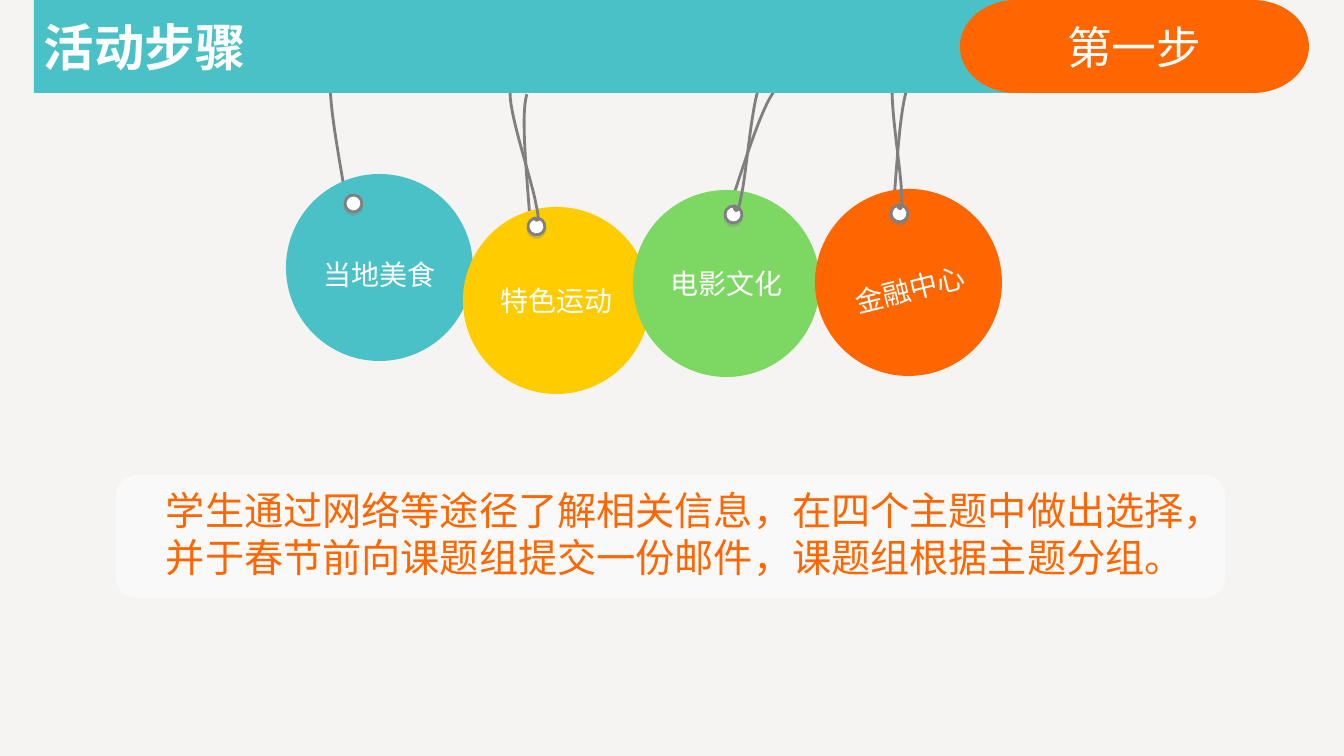
"""Build the activity-steps slide: a header bar, four hanging tags and a note."""
from lxml.etree import SubElement
from pptx import Presentation
from pptx.dml.color import RGBColor
from pptx.enum.shapes import MSO_SHAPE
from pptx.enum.text import MSO_ANCHOR, PP_ALIGN
from pptx.oxml.ns import qn
from pptx.util import Pt

FONT = "Noto Sans CJK SC"
TEAL, YELLOW, GREEN, ORANGE = "4AC1C7", "FFCC00", "7DD763", "FF6600"
WHITE, CORD, RING, PAPER = "FFFFFF", "7F7F7F", "808080", "F5F4F2"
TAG_SIZE, HOLE_SIZE = 187, 17
HOLE_TURN, FRONT_TURN = -68, -6.8

TITLE, STEP = "活动步骤", "第一步"
NOTE = ("学生通过网络等途径了解相关信息，在四个主题中做出选择，"
        "并于春节前向课题组提交一份邮件，课题组根据主题分组。")

BACK_CORD = dict(size=(99, 79), curve=[(99, 79), (56, 48), (12, 18), (0, 0)])
FRONT_CORD = dict(size=(109, 78), curve=[(104, 77), (108, 78), (115, 78), (97, 66),
                                         (79, 52), (11, 16), (0, 0)])
CENTERED = dict(align=PP_ALIGN.CENTER, spacing=1.4)
PLAIN = dict(align=PP_ALIGN.LEFT)
TAGS = [
    dict(text="当地美食", color=TEAL, at=(286, 174), hole=(345, 195), turn=0, layout=CENTERED,
         back=(289, 96), front=None, tilt=44.8),
    dict(text="特色运动", color=YELLOW, at=(463, 207), hole=(528, 218), turn=0, layout=PLAIN,
         back=(479, 118), front=(469, 117), tilt=49.9),
    dict(text="电影文化", color=GREEN, at=(633, 190), hole=(725, 206), turn=0, layout=PLAIN,
         back=(703, 109), front=(694, 107), tilt=72.7),
    dict(text="金融中心", color=ORANGE, at=(815, 189), hole=(891, 205), turn=-14, layout=CENTERED,
         back=(852, 105), front=(842, 104), tilt=58.7),
]


def px(length):
    return round(length * 914400 / 100.8)


def rgb(color):
    return RGBColor.from_string(color)


def write(shape, text, size, color=WHITE, bold=False, align=PP_ALIGN.CENTER,
          anchor=MSO_ANCHOR.MIDDLE, spacing=None):
    frame = shape.text_frame
    frame.word_wrap = True
    frame.vertical_anchor = anchor
    paragraph = frame.paragraphs[0]
    paragraph.alignment = align
    paragraph.line_spacing = spacing
    run = paragraph.add_run()
    run.text = text
    run.font.size = Pt(size)
    run.font.bold = bold
    run.font.name = FONT
    run.font.color.rgb = rgb(color)
    SubElement(run.font._element, qn("a:ea"), typeface=FONT)


def add_block(shapes, kind, left, top, width, height, fill):
    shape = shapes.add_shape(kind, px(left), px(top), px(width), px(height))
    shape.shadow.inherit = False
    shape.fill.solid()
    shape.fill.fore_color.rgb = rgb(fill)
    shape.line.fill.background()
    return shape


def set_alpha(color_element, percent):
    SubElement(color_element, qn("a:alpha"), val=str(percent * 1000))


def add_points(outline, command, points):
    element = SubElement(outline, qn(command))
    for x, y in points:
        SubElement(element, qn("a:pt"), x=str(px(x)), y=str(px(y)))


def add_cord(shapes, left, top, size, curve, rotation):
    width, height = size
    builder = shapes.build_freeform(px(left), px(top))
    builder.add_line_segments([(px(left + width), px(top + height))], close=False)
    cord = builder.convert_to_shape()
    outline = next(cord._element.iter(qn("a:path")))
    for child in list(outline):
        outline.remove(child)
    add_points(outline, "a:moveTo", curve[:1])
    for first in range(1, len(curve), 3):
        add_points(outline, "a:cubicBezTo", curve[first:first + 3])
    cord.rotation = rotation
    cord.shadow.inherit = False
    cord.fill.background()
    cord.line.color.rgb = rgb(CORD)
    cord.line.width = Pt(2)


def add_hole(shapes, left, top, rotation):
    hole = add_block(shapes, MSO_SHAPE.OVAL, left, top, HOLE_SIZE, HOLE_SIZE, WHITE)
    hole.rotation = rotation
    hole.line.color.rgb = rgb(RING)
    hole.line.width = Pt(2)
    effects = hole._element.spPr.find(qn("a:effectLst"))
    shadow = SubElement(effects, qn("a:outerShdw"), blurRad="0", dist=str(Pt(1.8)),
                        dir="5400000", rotWithShape="0")
    set_alpha(SubElement(shadow, qn("a:srgbClr"), val=RING), 35)


def add_tag(shapes, tag):
    tilt = tag["tilt"]
    add_cord(shapes, *tag["back"], **BACK_CORD, rotation=tilt)
    disc = add_block(shapes, MSO_SHAPE.OVAL, *tag["at"], TAG_SIZE, TAG_SIZE, tag["color"])
    disc.rotation = tag["turn"]
    write(disc, tag["text"], 20, **tag["layout"])
    add_hole(shapes, *tag["hole"], rotation=tilt + HOLE_TURN)
    if tag["front"]:
        add_cord(shapes, *tag["front"], **FRONT_CORD, rotation=tilt + FRONT_TURN)


def add_note(shapes):
    group = shapes.add_group_shape()
    panel = add_block(group.shapes, MSO_SHAPE.ROUNDED_RECTANGLE, 116, 475, 1109, 123, WHITE)
    set_alpha(panel._element.spPr.find(qn("a:solidFill"))[0], 54)
    box = group.shapes.add_textbox(px(156), px(481), px(1069), px(105))
    write(box, NOTE, 28, color=ORANGE, align=PP_ALIGN.LEFT, anchor=MSO_ANCHOR.TOP)


def main():
    presentation = Presentation()
    presentation.slide_width, presentation.slide_height = px(1344), px(756)
    slide = presentation.slides.add_slide(presentation.slide_layouts[6])
    slide.background.fill.solid()
    slide.background.fill.fore_color.rgb = rgb(PAPER)
    for tag in TAGS:
        add_tag(slide.shapes, tag)
    header = add_block(slide.shapes, MSO_SHAPE.RECTANGLE, 34, 0, 1043, 93, TEAL)
    write(header, TITLE, 36, bold=True, align=PP_ALIGN.LEFT)
    badge = add_block(slide.shapes, MSO_SHAPE.FLOWCHART_TERMINATOR, 960, 0, 349, 93, ORANGE)
    write(badge, STEP, 32)
    add_note(slide.shapes)
    presentation.save("out.pptx")


if __name__ == "__main__":
    main()
